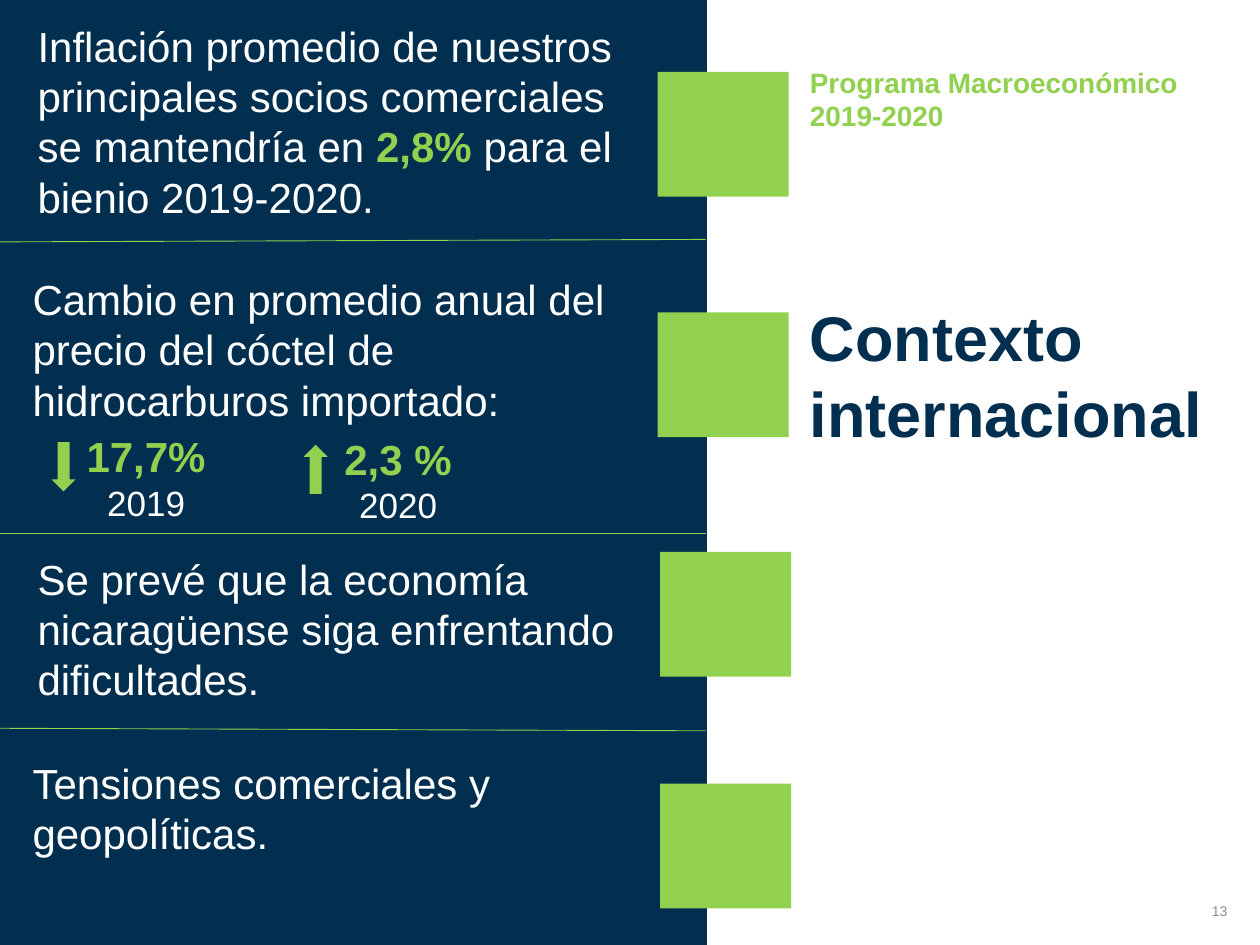
from lxml import etree
from pptx import Presentation, util as u
from pptx.dml.color import RGBColor
from pptx.enum import shapes, text
from pptx.oxml.ns import qn

NAVY = RGBColor(0x02, 0x2F, 0x4F)
GREEN = RGBColor(0x92, 0xD0, 0x50)
WHITE = RGBColor(0xFF, 0xFF, 0xFF)
GREY = RGBColor(0x8C, 0x8C, 0x8C)
KIND = shapes.MSO_SHAPE
ALIGN = text.PP_ALIGN

# Grid of 100 columns by 75 rows
WIDTH, HEIGHT = u.Inches(10), u.Inches(7.5)
COL, ROW = WIDTH / 100, HEIGHT / 75


def grid(x, y, w, h):
    return [int(n) for n in (x * COL, y * ROW, w * COL, h * ROW)]


def block(slide, kind, box, fill, turn=0):
    shape = slide.shapes.add_shape(kind, *grid(*box))
    shape.shadow.inherit = False
    shape.fill.solid()
    shape.fill.fore_color.rgb = fill
    shape.line.fill.background()
    shape.rotation = turn


def style(font, size, color, bold=False):
    font.name, font.size, font.bold = "Arial", u.Pt(size), bold
    font.color.rgb = color


def write(slide, box, paras, align=ALIGN.LEFT, wrap=True, anchor=text.MSO_ANCHOR.TOP):
    """Each paragraph is (runs, size, color, bold); a run in a tuple is a highlight."""
    frame = slide.shapes.add_textbox(*grid(*box)).text_frame
    frame.word_wrap, frame.vertical_anchor = wrap, anchor
    for i, (runs, size, color, bold) in enumerate(paras):
        para = frame.add_paragraph() if i else frame.paragraphs[0]
        para.alignment = align
        style(para.font, size, color, bold)
        for part in runs:
            run = para.add_run()
            run.text = part[0] if isinstance(part, tuple) else part
            if isinstance(part, tuple):
                style(run.font, size, GREEN, True)


def rule(slide, x1, y1, x2, y2):
    ends = grid(x1, y1, x2, y2)
    line = slide.shapes.add_connector(shapes.MSO_CONNECTOR.STRAIGHT, *ends)
    line.line.color.rgb, line.line.width = GREEN, u.Pt(0.5)
    etree.SubElement(line._element.spPr, qn("a:effectLst"))


def band(slide, top, words, mark, paras):
    """One message: its text box and its square, both measured from the band's top."""
    x, y, w, h = words
    write(slide, (x, top + y, w, h), [(runs, 24, WHITE, False) for runs in paras])
    block(slide, KIND.RECTANGLE, (mark[0], top + mark[1], 10.4, 9.9), GREEN)


def change(slide, x, y, w, rate, year, turn):
    """An arrow with a rate and its year beside it."""
    block(slide, KIND.DOWN_ARROW, (x, y + 1.4, 1.9, 3.9), GREEN, turn)
    write(slide, (x + 1.9 + (26.3 - 26 if turn else -0.2), y, w, 8.4),
          [([rate], 24, GREEN, True), ([year], 20, WHITE, False)],
          ALIGN.CENTER, wrap=False)


def panel(slide, box):
    """Dark panel with four messages, parted by thin rules."""
    block(slide, KIND.RECTANGLE, box, NAVY)
    left, top, wide, _ = box
    bands = [
        (0, (2, 1.1, 52.7, 17.2), (52.2, 5.7),
         [["Inflación promedio de nuestros principales socios comerciales"],
          ["se mantendría en ", ("2,8% ",), "para el bienio 2019-2020."]]),
        (19.1, (1.6, 2.1, 48.9, 13.1), (52.2, 5.7),
         [["Cambio en promedio anual del precio del cóctel de hidrocarburos importado:"]]),
        (42.3, (2, 1.1, 51.8, 13.1), (52.4, 1.5),
         [["Se prevé que la economía nicaragüense siga enfrentando dificultades."]]),
        (57.9, (1.6, 1.7, 50.9, 12.1), (52.4, 4.3),
         [["Tensiones comerciales y geopolíticas."]]),
    ]
    for start, words, mark, paras in bands:
        band(slide, top + start, words, mark, paras)
    for start, end in ((19.2, 19), (42.3, 42.3), (57.8, 58)):
        rule(slide, left, top + start, left + wide - 0.1, top + end)
    change(slide, left + 4.1, top + 33.7, 11.6, "17,7%", "2019", 0)
    change(slide, left + 24.1, top + 33.9, 10.6, "2,3 %", "2020", 180)


def aside(slide, box):
    """Programme name, slide title and page number."""
    left, top, wide, high = box
    write(slide, (left, top + 4.7, 31.6, 6.4),
          [([line], 16, GREEN, True) for line in ("Programa Macroeconómico", "2019-2020")],
          wrap=False)
    write(slide, (left, top + 23.2, wide - 0.3, 13.1),
          [(["Contexto internacional"], 36, NAVY, True)])
    write(slide, (left + 7.3, top + high - 4.7, 27.8, 4), [(["13"], 8, GREY, False)],
          ALIGN.RIGHT, anchor=text.MSO_ANCHOR.MIDDLE)


def main():
    deck = Presentation()
    deck.slide_width, deck.slide_height = WIDTH, HEIGHT
    slide = deck.slides.add_slide(deck.slide_layouts[6])
    panel(slide, (0, 0, 56.1, 75))
    aside(slide, (63.3, 0, 36.7, 75))
    deck.save("out.pptx")


if __name__ == "__main__":
    main()
